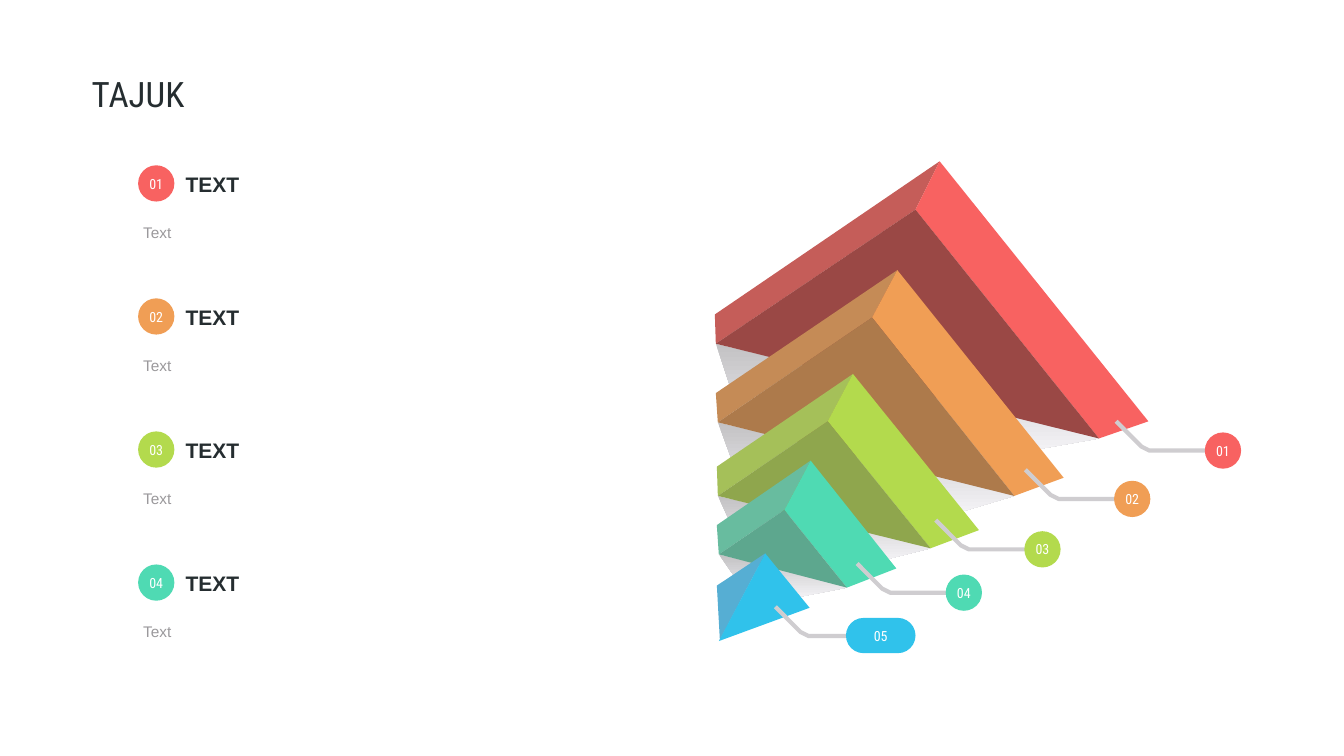
"""Build a slide with a tiered pyramid, numbered callouts and a four-item list."""
import pptx
import pptx.util
import pptx.dml.color
import pptx.enum.shapes
import pptx.enum.text
import pptx.oxml

Inches = pptx.util.Inches
Pt = pptx.util.Pt
RGBColor = pptx.dml.color.RGBColor
Shape = pptx.enum.shapes.MSO_SHAPE
Align = pptx.enum.text.PP_ALIGN
Fit = pptx.enum.text.MSO_AUTO_SIZE

WHITE = RGBColor(0xFF, 0xFF, 0xFF)
INK = RGBColor(0x25, 0x2D, 0x30)
GRAY = RGBColor(0x9B, 0x99, 0x9C)
LINE = RGBColor(0xCF, 0xCD, 0xD0)
DARK = RGBColor(0xC3, 0xC2, 0xC4)
PALE = RGBColor(0xF4, 0xF3, 0xF6)
RED = RGBColor(0xF8, 0x62, 0x61)
RED_TOP = RGBColor(0xC5, 0x5D, 0x59)
RED_LOW = RGBColor(0x9A, 0x48, 0x45)
AMBER = RGBColor(0xF0, 0x9E, 0x55)
AMBER_TOP = RGBColor(0xC5, 0x8B, 0x56)
AMBER_LOW = RGBColor(0xAD, 0x7A, 0x4B)
LIME = RGBColor(0xB3, 0xDA, 0x4D)
LIME_TOP = RGBColor(0xA5, 0xC0, 0x59)
LIME_LOW = RGBColor(0x8F, 0xA6, 0x4D)
TEAL = RGBColor(0x4F, 0xDA, 0xB3)
TEAL_TOP = RGBColor(0x68, 0xBC, 0x9F)
TEAL_LOW = RGBColor(0x5D, 0xA7, 0x8E)
BLUE = RGBColor(0x30, 0xC2, 0xEB)
BLUE_TOP = RGBColor(0x56, 0xAE, 0xD3)
HUES = [RED, AMBER, LIME, TEAL, BLUE]
HEAD = "Roboto Condensed"
BODY = "Arial"

deck = pptx.Presentation()
deck.slide_width = Inches(13.33)
deck.slide_height = Inches(7.5)
slide = deck.slides.add_slide(deck.slide_layouts[6])
shapes = slide.shapes


def outline(points, color=None, close=True):
    """Draw a path in inches, filled when a colour is given."""
    dots = [(Inches(x), Inches(y)) for x, y in points]
    pen = shapes.build_freeform(*dots[0])
    pen.add_line_segments(dots[1:], close=close)
    shape = pen.convert_to_shape()
    shape.shadow.inherit = False
    shape.line.fill.background()
    if color:
        shape.fill.solid()
        shape.fill.fore_color.rgb = color
    else:
        shape.fill.background()
    return shape


def write(shape, text, size, font, color, inset=0.02):
    """Put one formatted line of text in a shape and return its paragraph."""
    frame = shape.text_frame
    frame.text = text
    frame.word_wrap = True
    frame.margin_left = frame.margin_right = Inches(inset)
    frame.margin_top = frame.margin_bottom = Inches(inset)
    line = frame.paragraphs[0]
    face = line.runs[0].font
    face.size = Pt(size)
    face.name = font
    face.color.rgb = color
    return line


tiers = [
    (RED_TOP, RED, RED_LOW, (7.09, 3.12), (9.32, 1.6), (9.08, 2.08),
     (7.1, 3.41), (10.9, 4.35), (11.39, 4.18), (10.05, 4.5), (7.25, 3.86)),
    (AMBER_TOP, AMBER, AMBER_LOW, (7.1, 3.9), (8.9, 2.68), (8.65, 3.15),
     (7.12, 4.19), (10.06, 4.92), (10.55, 4.74), (9.49, 5.09), (7.28, 4.62)),
    (LIME_TOP, LIME, LIME_LOW, (7.11, 4.63), (8.46, 3.71), (8.21, 4.18),
     (7.12, 4.92), (9.23, 5.44), (9.71, 5.26), (8.67, 5.58), (7.25, 5.2)),
    (TEAL_TOP, TEAL, TEAL_LOW, (7.11, 5.21), (8.04, 4.57), (7.78, 5.06),
     (7.13, 5.5), (8.4, 5.83), (8.89, 5.64), (7.83, 5.94), (7.35, 5.81)),
]
for top, front, low, left, peak, inner, base, foot, tip, far, near in tiers:
    outline([base, left, peak, inner], top)
    outline([peak, inner, foot, tip], front)
    shade = outline([foot, far, near, base])
    shade.fill.gradient()
    shade.fill.gradient_angle = 270
    for stop, tone in zip(shade.fill.gradient_stops, (DARK, PALE)):
        stop.color.rgb = tone
    outline([inner, base, foot], low)
outline([(7.11, 5.81), (7.59, 5.49), (7.14, 6.35)], BLUE_TOP)
outline([(8.03, 6.03), (7.59, 5.49), (7.13, 6.36)], BLUE)

bend = [(0, 0), (0.22, 0.22), (0.25, 0.25), (0.29, 0.27), (0.33, 0.29),
        (0.38, 0.29), (0.91, 0.29)]
starts = [(11.07, 4.18), (10.17, 4.66), (9.28, 5.16), (8.5, 5.59), (7.69, 6.02)]
badges = []
for num, (x, y) in enumerate(starts, 1):
    wire = outline([(x + dx, y + dy) for dx, dy in bend], close=False)
    wire.line.color.rgb = LINE
    wire.line.width = Pt(3)
    if num < 5:
        spot = shapes.add_shape(Shape.OVAL, Inches(x + 0.88), Inches(y + 0.11),
                                Inches(0.36), Inches(0.36))
    else:
        spot = shapes.add_shape(Shape.ROUNDED_RECTANGLE, Inches(x + 0.7),
                                Inches(y + 0.11), Inches(0.69), Inches(0.35))
        spot.adjustments[0] = 0.5
    badges.append((num, spot))

for num in range(1, 5):
    y = 1.64 + 1.32 * (num - 1)
    note = shapes.add_textbox(Inches(1.39), Inches(y + 0.45), Inches(4.73), Inches(0.29))
    write(note, "Text", 11, BODY, GRAY, 0.03).line_spacing = 1.5
    label = shapes.add_textbox(Inches(1.82), Inches(y + 0.04), Inches(2.55), Inches(0.29))
    write(label, "TEXT", 15, BODY, INK).runs[0].font.bold = True
    note.text_frame.auto_size = label.text_frame.auto_size = Fit.SHAPE_TO_FIT_TEXT
    spot = shapes.add_shape(Shape.OVAL, Inches(1.37), Inches(y), Inches(0.36), Inches(0.36))
    badges.append((num, spot))

for num, spot in badges:
    spot.shadow.inherit = False
    spot.fill.solid()
    spot.fill.fore_color.rgb = HUES[num - 1]
    spot.line.fill.background()
    write(spot, f"{num:02}", 10, HEAD, WHITE, 0).alignment = Align.CENTER

title = shapes.add_textbox(Inches(0.89), Inches(0.7), Inches(3.97), Inches(0.46))
write(title, "TAJUK", 25, HEAD, INK)
title.text_frame.auto_size = Fit.SHAPE_TO_FIT_TEXT

deck.save("out.pptx")
